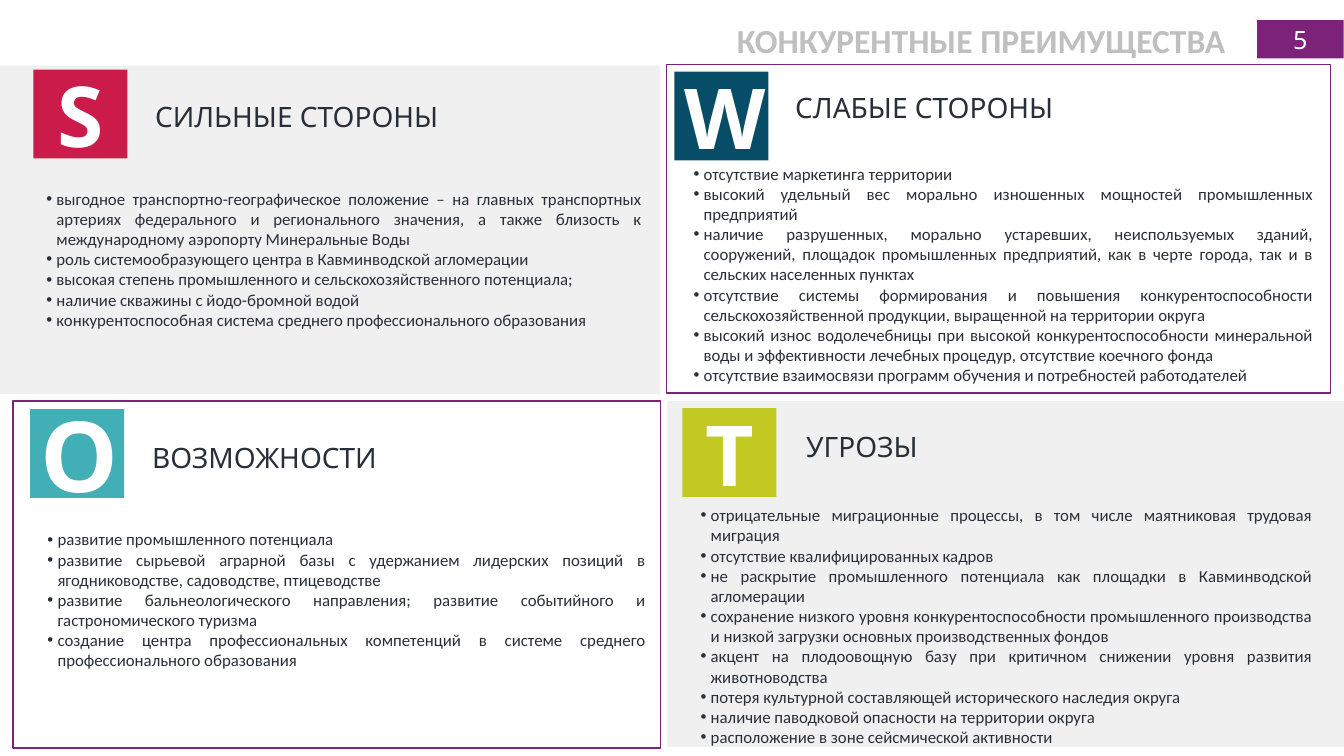
from dataclasses import dataclass

from lxml.etree import SubElement
from pptx import Presentation
from pptx.dml.color import RGBColor
from pptx.enum.shapes import MSO_SHAPE
from pptx.enum.text import MSO_ANCHOR as Anchor, MSO_AUTO_SIZE as AutoSize, PP_ALIGN as Align
from pptx.oxml.ns import qn
from pptx.util import Inches, Pt

SLIDE_WIDTH, SLIDE_HEIGHT = Inches(13.33), Inches(7.5)
COMPARISON_LAYOUT = 4  # one title and four body placeholders
BADGE_SIZE = (7, 11.75)
HEADING_SIZE = (27, 5.87)
PURPLE, GREY, INK, WHITE = "7C2278", "F0F0F0", "282F39", "FFFFFF"


@dataclass
class Quadrant:
    """One quarter of the SWOT; places are percentages of the slide's size."""
    letter: str
    color: str
    heading: str
    panel: tuple
    badge_at: tuple
    heading_at: tuple
    list_box: tuple
    items: list
    framed: bool = False
    letter_size: int = 60


QUADRANTS = [
    Quadrant(
        "S", "CB1B4A", "СИЛЬНЫЕ СТОРОНЫ",
        panel=(-0.05, 8.67, 49.2, 43.47), badge_at=(2.48, 9.2),
        heading_at=(10.8, 12.53), list_box=(2.7, 24.27, 45.83, 20.13),
        items=[
            "выгодное транспортно-географическое положение – на главных транспортных артериях "
            "федерального и регионального значения, а также близость к международному аэропорту "
            "Минеральные Воды",
            "роль системообразующего центра в Кавминводской агломерации",
            "высокая степень промышленного и сельскохозяйственного потенциала;",
            "наличие скважины с йодо-бромной водой",
            "конкурентоспособная система среднего профессионального образования",
        ]),
    Quadrant(
        "W", "074D67", "СЛАБЫЕ СТОРОНЫ", framed=True,
        panel=(49.58, 8.53, 49.43, 43.47), badge_at=(50.18, 9.47),
        heading_at=(58.43, 11.33), list_box=(50.85, 20.93, 47.63, 30.93),
        items=[
            "отсутствие маркетинга территории",
            "высокий удельный вес морально изношенных мощностей промышленных предприятий",
            "наличие разрушенных, морально устаревших, неиспользуемых зданий, сооружений, площадок "
            "промышленных предприятий, как в черте города, так и в сельских населенных пунктах",
            "отсутствие системы формирования и повышения конкурентоспособности "
            "сельскохозяйственной продукции, выращенной на территории округа",
            "высокий износ водолечебницы при высокой конкурентоспособности минеральной воды "
            "и эффективности лечебных процедур, отсутствие коечного фонда",
            "отсутствие взаимосвязи программ обучения и потребностей работодателей",
        ]),
    Quadrant(
        "O", "42AFB6", "ВОЗМОЖНОСТИ", framed=True, letter_size=70,
        panel=(0.98, 53.07, 48.15, 45.87), badge_at=(2.25, 54.13),
        heading_at=(10.58, 57.6), list_box=(2.78, 69.33, 46.05, 20.13),
        items=[
            "развитие промышленного потенциала",
            "развитие сырьевой аграрной базы с удержанием лидерских позиций "
            "в ягодниководстве, садоводстве, птицеводстве",
            "развитие бальнеологического направления; развитие событийного "
            "и гастрономического туризма",
            "создание центра профессиональных компетенций в системе среднего "
            "профессионального образования",
        ]),
    Quadrant(
        "T", "C2C923", "УГРОЗЫ",
        panel=(49.65, 53.07, 50.4, 45.73), badge_at=(50.78, 54),
        heading_at=(59.25, 56.13), list_box=(51.38, 66.13, 47.03, 33.6),
        items=[
            "отрицательные миграционные процессы, в том числе маятниковая трудовая миграция",
            "отсутствие квалифицированных кадров",
            "не раскрытие промышленного потенциала как площадки в Кавминводской агломерации",
            "сохранение низкого уровня конкурентоспособности промышленного производства "
            "и низкой загрузки основных производственных фондов",
            "акцент на плодоовощную базу при критичном снижении уровня развития животноводства",
            "потеря культурной составляющей исторического наследия округа",
            "наличие паводковой опасности на территории округа",
            "расположение в зоне сейсмической активности",
        ]),
]


def rgb(color):
    return RGBColor.from_string(color)


def share(left, top, width, height):
    """Turn percentages of the slide into lengths."""
    return (int(SLIDE_WIDTH * left / 100), int(SLIDE_HEIGHT * top / 100),
            int(SLIDE_WIDTH * width / 100), int(SLIDE_HEIGHT * height / 100))


def write(shape, *lines, size, color=INK, font="Noto Sans", bold=False,
          align=Align.LEFT, anchor=Anchor.TOP, bullets=False, auto_size=AutoSize.NONE):
    frame = shape.text_frame
    frame.word_wrap = True
    frame.auto_size = auto_size
    frame.vertical_anchor = anchor
    for index, line in enumerate(lines):
        paragraph = frame.add_paragraph() if index else frame.paragraphs[0]
        paragraph.alignment = align
        paragraph.space_before = Pt(0)
        if bullets:
            add_bullet(paragraph)
        run = paragraph.add_run()
        run.text = line
        run.font.size, run.font.name, run.font.bold = Pt(size), font, bold
        run.font.color.rgb = rgb(color)


def add_bullet(paragraph, indent=Inches(0.1)):
    properties = paragraph._p.get_or_add_pPr()
    properties.set("marL", str(indent))
    properties.set("indent", str(-indent))
    SubElement(properties, qn("a:buFont")).set("typeface", "Arial")
    SubElement(properties, qn("a:buChar")).set("char", "•")


def add_rectangle(slide, box, fill=None, line=None):
    shape = slide.shapes.add_shape(MSO_SHAPE.RECTANGLE, *share(*box))
    shape.shadow.inherit = False
    if fill:
        shape.fill.solid()
        shape.fill.fore_color.rgb = rgb(fill)
    else:
        shape.fill.background()
    if line:
        shape.line.color.rgb = rgb(line)
        shape.line.width = Pt(1)
    else:
        shape.line.fill.background()
    return shape


def place(slide, placeholder, box):
    """Move a placeholder to its box and in front of the shapes drawn so far."""
    placeholder.left, placeholder.top, placeholder.width, placeholder.height = share(*box)
    slide.shapes.element.append(placeholder.element)
    return placeholder


def add_quadrant(slide, quadrant, body):
    if quadrant.framed:
        add_rectangle(slide, quadrant.panel, line=PURPLE)
    else:
        add_rectangle(slide, quadrant.panel, fill=GREY)
    badge = add_rectangle(slide, quadrant.badge_at + BADGE_SIZE, fill=quadrant.color)
    write(badge, quadrant.letter, size=quadrant.letter_size, color=WHITE, bold=True,
          align=Align.CENTER, anchor=Anchor.MIDDLE)
    heading = slide.shapes.add_textbox(*share(*quadrant.heading_at, *HEADING_SIZE))
    write(heading, quadrant.heading, size=20, auto_size=AutoSize.SHAPE_TO_FIT_TEXT)
    write(place(slide, body, quadrant.list_box), *quadrant.items, size=12, font="Calibri",
          align=Align.JUSTIFY, bullets=True, auto_size=AutoSize.SHAPE_TO_FIT_TEXT)


def main():
    presentation = Presentation()
    presentation.slide_width, presentation.slide_height = SLIDE_WIDTH, SLIDE_HEIGHT
    slide = presentation.slides.add_slide(presentation.slide_layouts[COMPARISON_LAYOUT])
    title, *bodies = slide.placeholders
    for quadrant, body in zip(QUADRANTS, bodies):
        add_quadrant(slide, quadrant, body)
    page_number = add_rectangle(slide, (93.53, 2.67, 6.45, 5.07), fill=PURPLE)
    write(page_number, "5", size=18, color=WHITE, align=Align.CENTER, anchor=Anchor.MIDDLE)
    write(place(slide, title, (54.08, 2, 40.35, 6.53)), "КОНКУРЕНТНЫЕ ПРЕИМУЩЕСТВА",
          size=24, color="BFBFBF", font="Calibri", bold=True, anchor=Anchor.MIDDLE)
    presentation.save("out.pptx")


if __name__ == "__main__":
    main()
